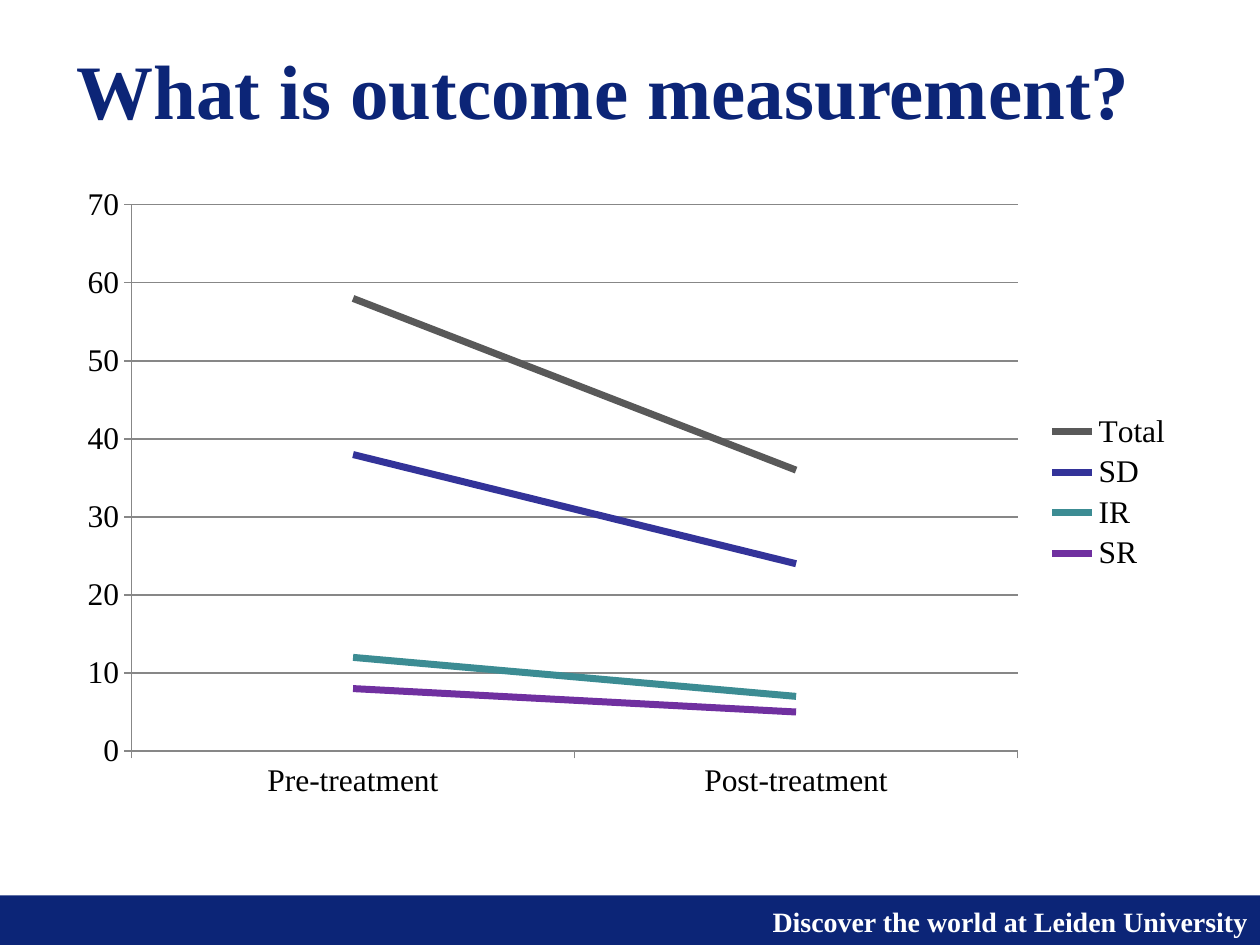
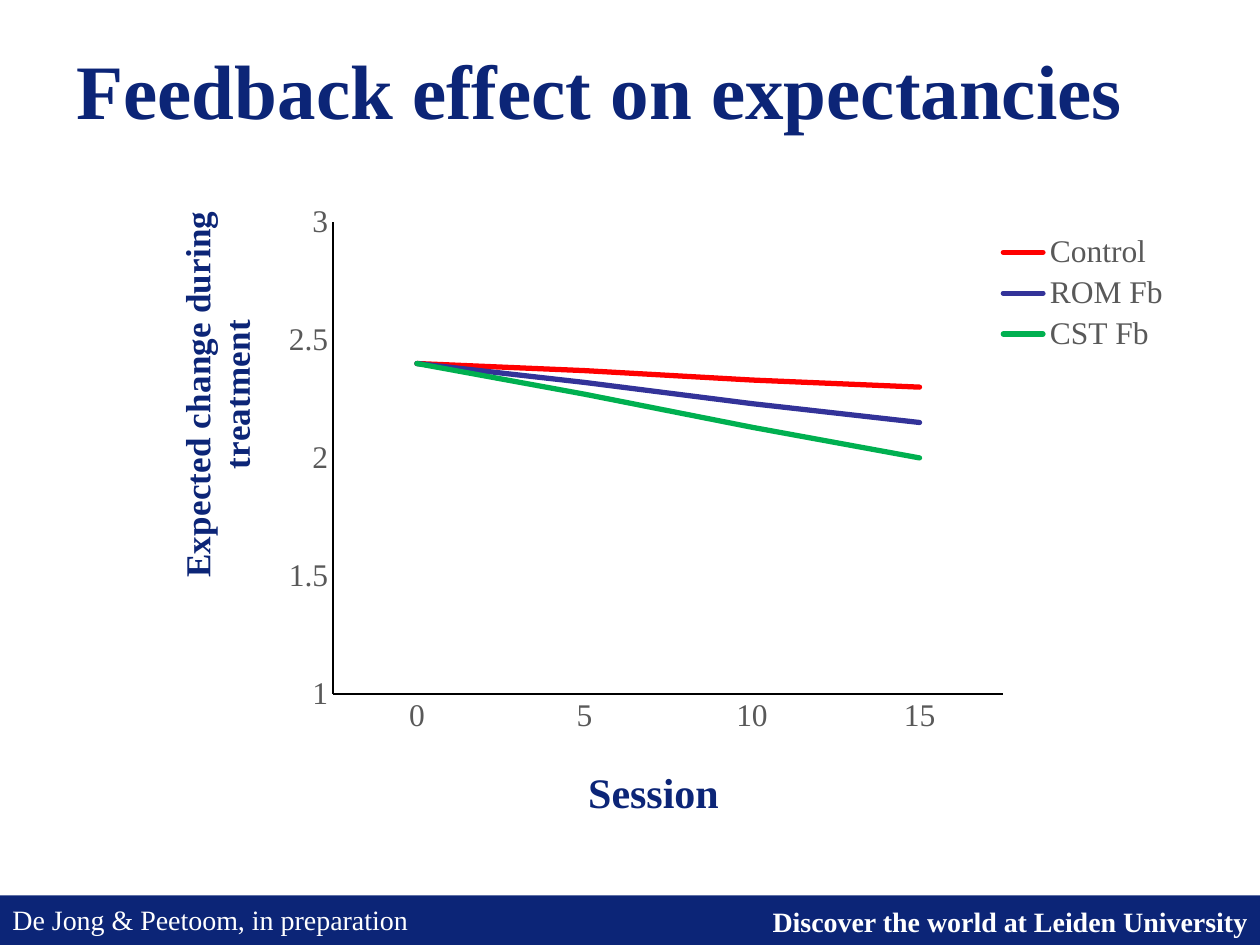
from pptx import Presentation
from pptx.util import Pt
from pptx.dml.color import RGBColor as RGB
from pptx.chart.data import CategoryChartData
from pptx.enum.chart import XL_CHART_TYPE as CT, XL_LEGEND_POSITION as LP, XL_TICK_MARK as TM
from pptx.enum.shapes import MSO_SHAPE
from pptx.enum.text import MSO_ANCHOR, PP_ALIGN
from pptx.oxml import parse_xml
from pptx.oxml.ns import nsdecls

FONT = "Times New Roman"
C = {"navy": "0C2577", "white": "FFFFFF", "black": "000000", "axis": "878787",
     "grey": "595959", "blue": "333399", "teal": "3C8C93", "purple": "7030A0",
     "red": "FF0000", "green": "00B050"}


def style(font, size, color, bold=False):
    font.name, font.size, font.bold = FONT, Pt(size), bold
    font.color.rgb = RGB.from_string(C[color])


def place(element, index, inner=False, **fractions):
    """Give a chart part a manual layout, in fractions of the chart."""
    for old in element.xpath("c:layout"):
        element.remove(old)
    target = '<c:layoutTarget val="inner"/>' if inner else ""
    modes = '<c:xMode val="edge"/><c:yMode val="edge"/>'
    sizes = "".join(f'<c:{k} val="{v}"/>' for k, v in fractions.items())
    element.insert(index, parse_xml(
        f'<c:layout {nsdecls("c")}><c:manualLayout>{target}{modes}{sizes}'
        "</c:manualLayout></c:layout>"))


slides = [
    dict(title="What is outcome measurement?", note=None,
         box=(36.7, 100, 641, 363), plot=dict(x=0.06, y=0.047, w=0.79, h=0.86),
         cats=["Pre-treatment", "Post-treatment"], text="black",
         axis=("axis", 0.75), tick=TM.OUTSIDE, grid=True, scale=(0, 70, 10),
         width=4, cap="flat",
         series=[("Total", "grey", (58, 36)), ("SD", "blue", (38, 24)),
                 ("IR", "teal", (12, 7)), ("SR", "purple", (8, 5))]),
    dict(title="Feedback effect on expectancies",
         note="De Jong & Peetoom, in preparation",
         box=(87.8, 110.2, 607, 370), plot=dict(x=0.169, y=0.045, w=0.631, h=0.729),
         cats=["0", "5", "10", "15"], text="grey",
         axis=("black", 1.5), tick=TM.NONE, grid=False, scale=(1, 3, 0.5),
         width=3, cap="rnd",
         legend=dict(x=0.79, y=0.055, w=0.17, h=0.2),
         axis_titles=[("Session", 24, 0, dict(x=0.402, y=0.873)),
                      ("Expected change during treatment", 20, -90,
                       dict(x=0.014, y=0.019))],
         series=[("Control", "red", (2.4, 2.37, 2.33, 2.3)),
                 ("ROM Fb", "blue", (2.4, 2.32, 2.23, 2.15)),
                 ("CST Fb", "green", (2.4, 2.27, 2.13, 2))]),
]

prs = Presentation()
prs.slide_width, prs.slide_height = Pt(720), Pt(540)

for d in slides:
    s = prs.slides.add_slide(prs.slide_layouts[6])

    # Footer band
    band = s.shapes.add_shape(MSO_SHAPE.RECTANGLE, 0, Pt(511.7), Pt(720), Pt(28.3))
    band.shadow.inherit = False
    band.fill.solid()
    band.fill.fore_color.rgb = RGB.from_string(C["navy"])
    band.line.fill.background()

    # Title and footer texts
    texts = [("Discover the world at Leiden University", (238.3, 513.4, 481.7, 26.6),
              16, "white", True, PP_ALIGN.RIGHT, MSO_ANCHOR.TOP),
             (d["title"], (36.7, 26, 641, 50),
              44, "navy", True, PP_ALIGN.LEFT, MSO_ANCHOR.MIDDLE)]
    if d["note"]:
        texts.append((d["note"], (0, 513.4, 294.5, 26.6),
                      16, "white", False, PP_ALIGN.LEFT, MSO_ANCHOR.TOP))
    for text, box, size, color, bold, align, anchor in texts:
        tf = s.shapes.add_textbox(*map(Pt, box)).text_frame
        tf.word_wrap, tf.vertical_anchor = True, anchor
        tf.text = text
        p = tf.paragraphs[0]
        p.alignment = align
        if text == d["note"]:
            p.line_spacing = 0.95
        style(p.runs[0].font, size, color, bold)

    # Line chart
    data = CategoryChartData()
    data.categories = d["cats"]
    for name, _, values in d["series"]:
        data.add_series(name, values)
    chart = s.shapes.add_chart(CT.LINE, *map(Pt, d["box"]), data).chart
    chart.has_title = False
    style(chart.font, 18, d["text"])
    place(chart.plots[0]._element.getparent(), 0, inner=True, **d["plot"])
    for ser, (_, color, _) in zip(chart.plots[0].series, d["series"]):
        ser.smooth = False
        ser.format.line.color.rgb = RGB.from_string(C[color])
        ser.format.line.width = Pt(d["width"])
        ser._element.xpath("c:spPr/a:ln")[0].set("cap", d["cap"])

    # Axes
    axes = [chart.category_axis, chart.value_axis]
    line_color, line_width = d["axis"]
    lines = [axis.format.line for axis in axes]
    axes[0].has_major_gridlines = False
    axes[1].has_major_gridlines = d["grid"]
    if d["grid"]:
        lines.append(axes[1].major_gridlines.format.line)
    for line in lines:
        line.color.rgb = RGB.from_string(C[line_color])
        line.width = Pt(line_width)
    for axis in axes:
        axis.major_tick_mark, axis.minor_tick_mark = d["tick"], TM.NONE
        style(axis.tick_labels.font, 18, d["text"])
    axes[1].minimum_scale, axes[1].maximum_scale, axes[1].major_unit = d["scale"]
    for axis, (text, size, angle, spot) in zip(axes, d.get("axis_titles", [])):
        tf = axis.axis_title.text_frame
        tf.text = text
        style(tf.paragraphs[0].runs[0].font, size, "navy", True)
        tf._txBody.bodyPr.set("rot", str(angle * 60000))
        tf._txBody.bodyPr.set("vert", "horz")
        place(axis.axis_title._element, 1, **spot)

    # Legend
    chart.has_legend = True
    chart.legend.position = LP.RIGHT
    chart.legend.include_in_layout = False
    style(chart.legend.font, 18, d["text"])
    if "legend" in d:
        place(chart.legend._element, 1, **d["legend"])

prs.save("out.pptx")
